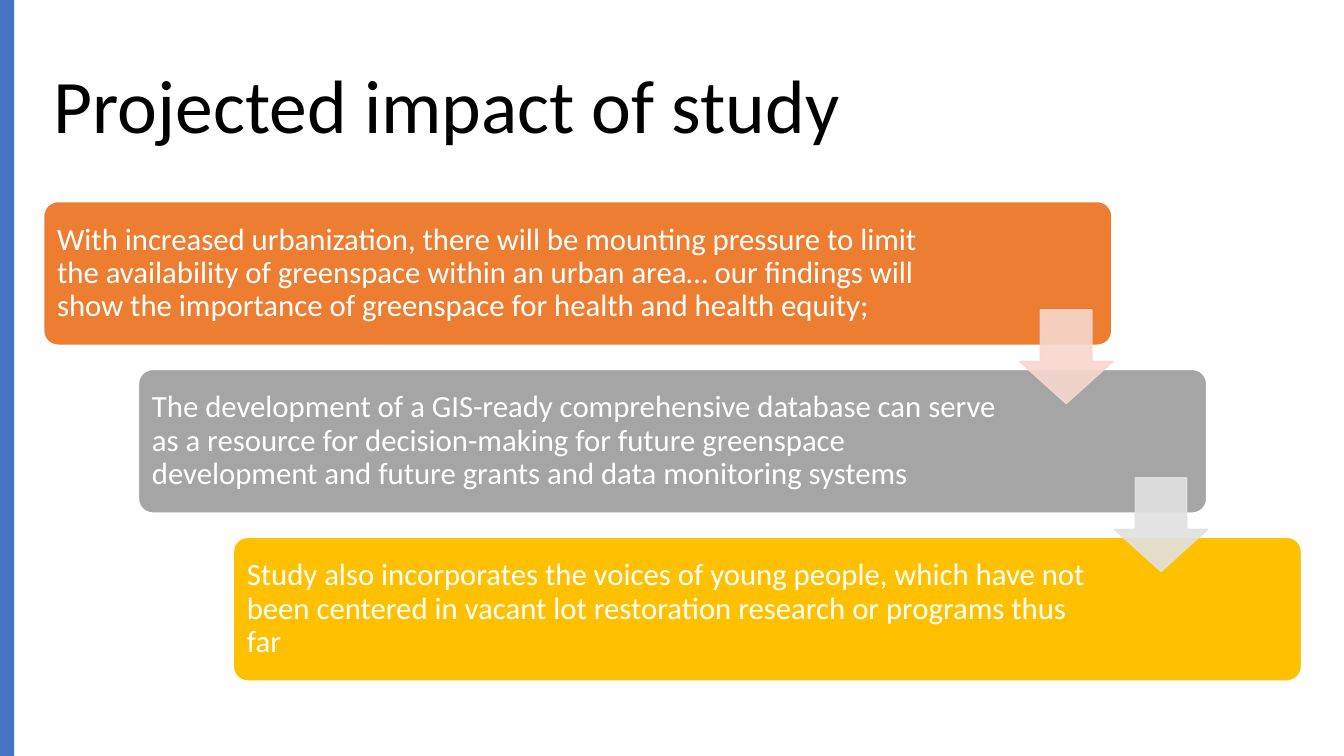
from lxml import etree
from pptx import Presentation
from pptx import util as u
from pptx.dml import color
from pptx.enum import shapes, text
from pptx.oxml import ns

WHITE = "FFFFFF"


def rgb(hex_value):
    return color.RGBColor.from_string(hex_value)


class SlideBuilder:
    """Holds the text style and the current slide."""

    font_name = "Calibri"
    line_spacing = 0.9

    def __init__(self, slide):
        self.slide = slide

    def add_wording(self, frame, wording, size, hex_value):
        frame.word_wrap = True
        frame.vertical_anchor = text.MSO_ANCHOR.MIDDLE
        paragraph = frame.paragraphs[0]
        paragraph.alignment = text.PP_ALIGN.LEFT
        paragraph.line_spacing = self.line_spacing
        run = paragraph.add_run()
        run.text = wording
        run.font.name = self.font_name
        run.font.size = u.Pt(size)
        run.font.color.rgb = rgb(hex_value)

    def title(self, wording, left, top, width, height):
        title = self.slide.shapes.title
        title.left, title.top = u.Cm(left), u.Cm(top)
        title.width, title.height = u.Cm(width), u.Cm(height)
        self.add_wording(title.text_frame, wording, 54, "000000")

    def shape(self, kind, left, top, width, height, fill, line=None,
              adjustments=(), opacity=None):
        shape = self.slide.shapes.add_shape(
            kind, u.Cm(left), u.Cm(top), u.Cm(width), u.Cm(height))
        shape.shadow.inherit = False
        for index, value in enumerate(adjustments):
            shape.adjustments[index] = value
        shape.fill.solid()
        shape.fill.fore_color.rgb = rgb(fill)
        if line:
            shape.line.color.rgb = rgb(line)
            shape.line.width = u.Pt(1)
        else:
            shape.line.fill.background()
        if opacity:
            for node in shape.element.spPr.iter(ns.qn("a:srgbClr")):
                etree.SubElement(node, ns.qn("a:alpha"), val=str(opacity * 1000))

    def text_box(self, wording, left, top, width, height, inset):
        box = self.slide.shapes.add_textbox(
            u.Cm(left), u.Cm(top), u.Cm(width), u.Cm(height))
        frame = box.text_frame
        frame.margin_left = frame.margin_right = u.Cm(inset)
        frame.margin_top = frame.margin_bottom = u.Cm(inset)
        self.add_wording(frame, wording, 22, WHITE)


def main():
    presentation = Presentation()
    presentation.slide_width, presentation.slide_height = u.Cm(33.87), u.Cm(19.05)
    slide = presentation.slides.add_slide(presentation.slide_layouts[5])
    builder = SlideBuilder(slide)

    # Title and side bar
    builder.title("Projected impact of study", 1.1, 0.9, 31.7, 3.68)
    builder.shape(shapes.MSO_SHAPE.RECTANGLE, 0, 0, 0.36, 19.05, "4472C4")

    # Staircase of impacts: wording, fill, text width
    impacts = [
        ("With increased urbanization, there will be mounting pressure to limit "
         "the availability of greenspace within an urban area… our findings will "
         "show the importance of greenspace for health and health equity;",
         "ED7D31", 23),
        ("The development of a GIS-ready comprehensive database can serve as a "
         "resource for decision-making for future greenspace development and "
         "future grants and data monitoring systems",
         "A5A5A5", 22),
        ("Study also incorporates the voices of young people, which have not been "
         "centered in vacant lot restoration research or programs thus far",
         "FFC000", 22),
    ]
    left, top, step_x, step_y = 1.1, 5.08, 2.39, 4.23
    steps = [(left + i * step_x, top + i * step_y) for i in range(len(impacts))]
    for (x, y), (wording, fill, text_width) in zip(steps, impacts):
        builder.shape(shapes.MSO_SHAPE.ROUNDED_RECTANGLE, x, y, 26.92, 3.62,
                      fill, WHITE, [0.1])
        builder.text_box(wording, x + 0.11, y + 0.11, text_width, 3.4, 0.23)

    # Arrows leading from each step to the next
    for (x, y), tint in zip(steps, ["F8D7CE", "E1E1E1"]):
        builder.shape(shapes.MSO_SHAPE.DOWN_ARROW, x + 24.59, y + 2.73, 2.36, 2.36,
                      tint, tint, [0.55, 0.45], opacity=90)

    presentation.save("out.pptx")


if __name__ == "__main__":
    main()
